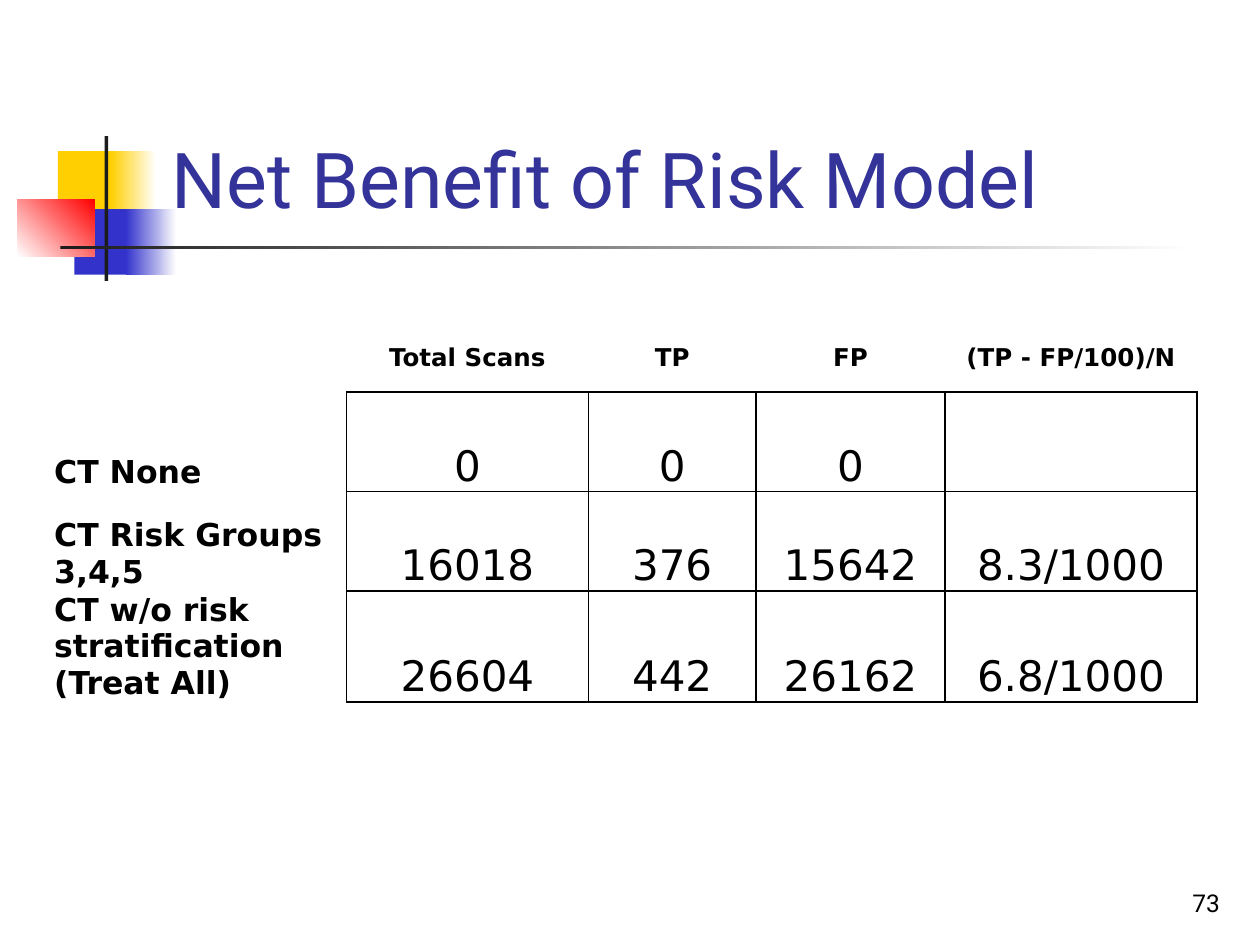
from dataclasses import dataclass

from lxml.etree import SubElement
from pptx import Presentation
from pptx.dml.color import RGBColor
from pptx.enum.shapes import MSO_SHAPE
from pptx.enum.text import MSO_ANCHOR, MSO_AUTO_SIZE, PP_ALIGN
from pptx.oxml.ns import qn
from pptx.util import Inches, Pt


@dataclass(frozen=True)
class Theme:
    yellow: str = "FFCF01"
    blue: str = "3333CC"
    red: str = "FF0000"
    dark: str = "1C1C1C"
    white: str = "FFFFFF"
    black: str = "000000"
    title: str = "333399"
    font: str = "Roboto"
    table_font: str = "DejaVu Sans"
    title_size: int = 44
    small_size: int = 14
    label_size: int = 18
    value_size: int = 24
    border: int = 1


class SlideBuilder:
    """Adds themed elements to one slide."""

    def __init__(self, prs, theme):
        self.t = theme
        self.s = prs.slides.add_slide(prs.slide_layouts[5])

    def style(self, p, size, color, font, align, bold=False):
        p.alignment = align
        p.font.size, p.font.name, p.font.bold = Pt(size), font, bold
        p.font.color.rgb = RGBColor.from_string(color)

    def block(self, x, y, w, h, start, end=None, angle=0):
        sp = self.s.shapes.add_shape(
            MSO_SHAPE.RECTANGLE, Inches(x), Inches(y), Inches(w), Inches(h))
        sp.shadow.inherit = False
        sp.line.fill.background()
        if end is None:
            sp.fill.solid()
            sp.fill.fore_color.rgb = RGBColor.from_string(start)
            return
        sp.fill.gradient()
        sp.fill.gradient_angle = angle
        for stop, color, position in zip(sp.fill.gradient_stops, (start, end), (0, 1)):
            stop.color.rgb = RGBColor.from_string(color)
            stop.position = position

    def title(self, text, x, y, w, h):
        sp = self.s.shapes.title
        self.s.shapes._spTree.append(sp._element)
        sp.left, sp.top, sp.width, sp.height = map(Inches, (x, y, w, h))
        tf = sp.text_frame
        tf.text = text
        tf.auto_size = MSO_AUTO_SIZE.NONE
        tf.vertical_anchor = MSO_ANCHOR.BOTTOM
        self.style(tf.paragraphs[0], self.t.title_size, self.t.title,
                   self.t.font, PP_ALIGN.LEFT)

    def text(self, text, x, y, w, h):
        tf = self.s.shapes.add_textbox(*map(Inches, (x, y, w, h))).text_frame
        tf.text = text
        tf.word_wrap = True
        tf.vertical_anchor = MSO_ANCHOR.BOTTOM
        self.style(tf.paragraphs[0], self.t.small_size, self.t.black,
                   self.t.font, PP_ALIGN.RIGHT)

    def borders(self, cell, sides):
        tc_pr = cell._tc.get_or_add_tcPr()
        for side in "LRTB":
            ln = SubElement(tc_pr, qn(f"a:ln{side}"), w=str(Pt(self.t.border)))
            if side in sides:
                fill = SubElement(ln, qn("a:solidFill"))
                SubElement(fill, qn("a:srgbClr"), val=self.t.black)
            else:
                SubElement(ln, qn("a:noFill"))

    def cell(self, cell, text, row, col, last_row):
        header, label = row == 0, col == 0
        if header or row == last_row:
            sides = "" if label else "B" if header else "T"
        else:
            sides = "R" if label else "LRTB"
        self.borders(cell, sides)
        cell.fill.background()
        if not text:
            return
        cell.text = text
        cell.margin_left = cell.margin_right = cell.margin_top = Inches(0.01)
        cell.margin_bottom = 0
        cell.vertical_anchor = MSO_ANCHOR.MIDDLE if header else MSO_ANCHOR.BOTTOM
        size = (self.t.small_size if header else
                self.t.label_size if label else self.t.value_size)
        self.style(cell.text_frame.paragraphs[0], size, self.t.black, self.t.table_font,
                   PP_ALIGN.LEFT if label else PP_ALIGN.CENTER, header or label)

    def table(self, rows, x, y, widths, heights):
        table = self.s.shapes.add_table(
            len(heights), len(widths), Inches(x), Inches(y),
            Inches(sum(widths)), Inches(sum(heights))).table
        table.first_row = table.horz_banding = False
        for column, width in zip(table.columns, widths):
            column.width = Inches(width)
        for row, height in zip(table.rows, heights):
            row.height = Inches(height)
        for r, values in enumerate(rows):
            for c, value in enumerate(values):
                self.cell(table.cell(r, c), value, r, c, len(rows) - 1)


def main():
    prs = Presentation()
    prs.slide_width, prs.slide_height = Inches(10), Inches(7.5)
    t = Theme()
    b = SlideBuilder(prs, t)

    b.block(0.46, 1.2, 0.48, 0.52, t.yellow)
    b.block(0.88, 1.2, 0.36, 0.52, t.yellow, t.white)
    b.block(0.59, 1.66, 0.46, 0.52, t.blue)
    b.block(1, 1.66, 0.4, 0.52, t.blue, t.white)
    b.block(0.14, 1.58, 0.61, 0.46, t.white, t.red, 45)
    b.block(0.83, 1.08, 0.03, 1.15, t.dark)
    b.block(0.48, 1.95, 9, 0.03, t.dark, t.white)

    b.title("Net Benefit of Risk Model", 1.26, 0.23, 8.52, 1.6)
    rows = [
        ["", "Total Scans", "TP", "FP", "(TP - FP/100)/N"],
        ["CT None", "0", "0", "0", ""],
        ["CT Risk Groups 3,4,5", "16018", "376", "15642", "8.3/1000"],
        ["CT w/o risk stratification (Treat All)", "26604", "442", "26162", "6.8/1000"],
        [""] * 5,
    ]
    b.table(rows, 0.42, 2.56, [2.33, 1.92, 1.33, 1.5, 2], [0.55, 0.79, 0.79, 0.75, 0.65])
    b.text("73", 7.7, 6.83, 2.08, 0.5)
    prs.save("out.pptx")


if __name__ == "__main__":
    main()
